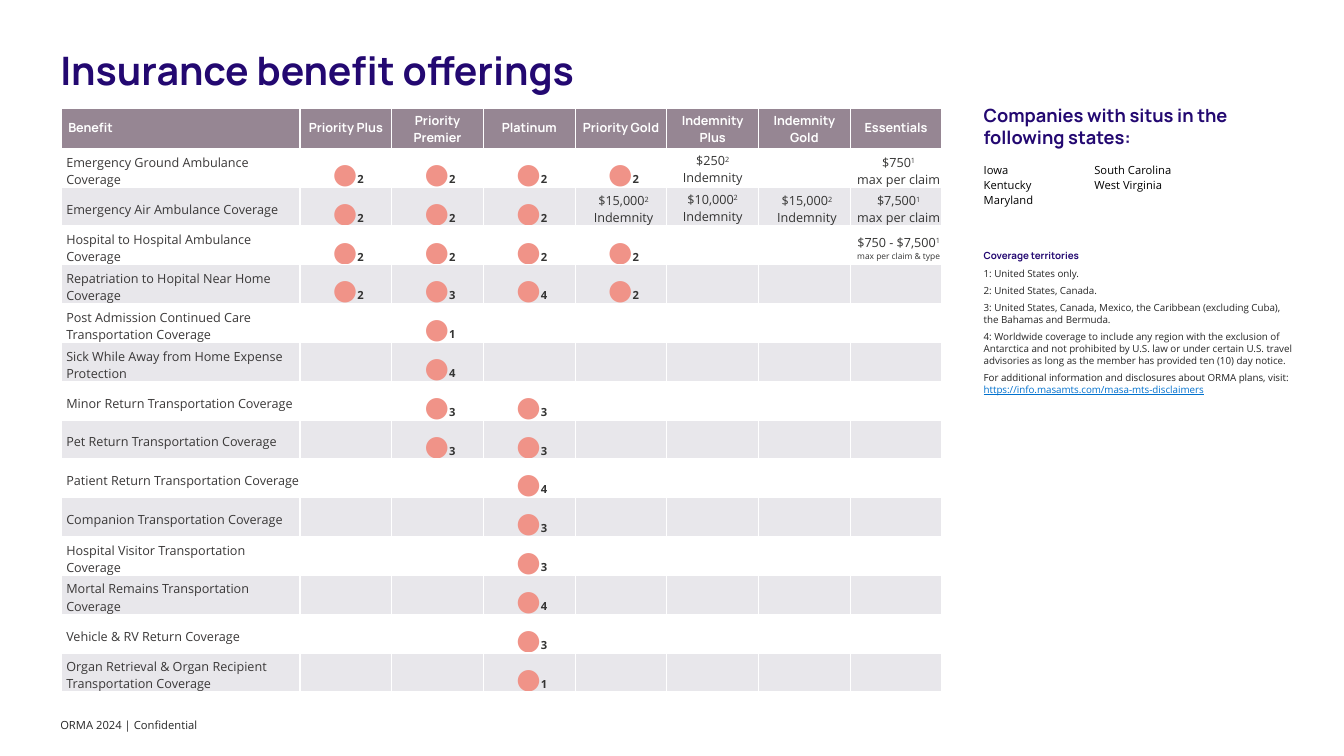
from dataclasses import dataclass

from pptx import Presentation
from pptx import util as u
from pptx.dml.color import RGBColor
from pptx.enum import text


@dataclass(frozen=True)
class Theme:
    """Fonts, colours and type sizes of the slide."""
    heading: str = "Manrope"
    body: str = "Open Sans"
    navy: str = "230871"
    black: str = "000000"
    ink: str = "262626"
    soft_ink: str = "222222"
    benefit: str = "3A3838"
    figure: str = "343433"
    dot: str = "F09388"
    link: str = "0071CE"
    white: str = "FFFFFF"
    header: str = "968693"
    band: str = "E8E7EB"
    title_size: float = 28
    dot_size: float = 20
    subtitle_size: float = 13
    table_size: float = 9
    small_size: float = 8
    note_size: float = 7
    tiny_size: float = 6


class BenefitSlide:
    """Draws titles, text blocks and the benefit table on one slide."""

    def __init__(self, deck, theme):
        self.theme = theme
        self.slide = deck.slides.add_slide(deck.slide_layouts[6])

    def style(self, font, face, size, colour, bold=False):
        """Set face, size, colour and weight of a font."""
        font.name, font.size, font.bold = face, u.Pt(size), bold
        font.color.rgb = RGBColor.from_string(colour)

    def run(self, paragraph, words, size, colour, bold=False):
        """Append a body-face run and return it."""
        piece = paragraph.add_run()
        piece.text = words
        self.style(piece.font, self.theme.body, size, colour, bold)
        return piece

    def block(self, place, lines, face, size, colour, bold=False,
              spacing=1.0, inset=(0, 0)):
        """Add a text box with one paragraph per line and return its frame."""
        frame = self.slide.shapes.add_textbox(*map(u.Cm, place)).text_frame
        frame.word_wrap = True
        frame.margin_left = frame.margin_right = u.Cm(inset[0])
        frame.margin_top = frame.margin_bottom = u.Cm(inset[1])
        for index, line in enumerate(lines):
            paragraph = frame.add_paragraph() if index else frame.paragraphs[0]
            paragraph.text = line
            paragraph.line_spacing = spacing
            self.style(paragraph.font, face, size, colour, bold)
        return frame

    def territories(self, place, heading, notes, lead, address):
        """Add the territory notes, closing with an underlined address."""
        t = self.theme
        frame = self.block(place, [heading, *notes], t.body, t.note_size, t.ink)
        self.style(frame.paragraphs[0].font, t.heading, t.note_size, t.navy, True)
        closing = frame.add_paragraph()
        self.run(closing, lead, t.note_size, t.soft_ink)
        self.run(closing, address, t.note_size, t.link).font.underline = True
        for paragraph in frame.paragraphs[1:]:
            paragraph.space_before = u.Pt(4)

    def cell(self, cell, fill, margins):
        """Prepare a table cell and return its first paragraph."""
        cell.fill.solid()
        cell.fill.fore_color.rgb = RGBColor.from_string(fill)
        cell.vertical_anchor = text.MSO_ANCHOR.MIDDLE
        (cell.margin_left, cell.margin_top,
         cell.margin_right, cell.margin_bottom) = map(u.Cm, margins)
        return cell.text_frame.paragraphs[0]

    def cover(self, cell, paragraph, cover):
        """Fill a cell with a dot and territory, or an amount and its note."""
        t = self.theme
        paragraph.alignment = text.PP_ALIGN.CENTER
        if isinstance(cover, int):
            self.run(paragraph, "●", t.dot_size, t.dot)
            self.run(paragraph, str(cover), t.small_size, t.figure, True)
        elif cover:
            amount, territory, note, note_size = cover
            self.run(paragraph, amount, t.table_size, t.figure)
            mark = self.run(paragraph, territory, t.table_size, t.figure)
            mark.font._element.set("baseline", "30000")
            below = cell.text_frame.add_paragraph()
            below.alignment = text.PP_ALIGN.CENTER
            self.run(below, note, note_size, t.figure)
        else:
            self.style(paragraph.font, t.body, t.table_size, t.figure)

    def benefits(self, place, plans, rows, benefit_width, header_height):
        """Add the table of benefits against plans."""
        t = self.theme
        width, height = place[2:]
        table = self.slide.shapes.add_table(
            len(rows) + 1, len(plans), *map(u.Cm, place)).table
        for index, column in enumerate(table.columns):
            column.width = u.Cm((width - benefit_width) / (len(plans) - 1)
                                if index else benefit_width)
        for index, row in enumerate(table.rows):
            row.height = u.Cm((height - header_height) / len(rows)
                              if index else header_height)
        for column, plan in enumerate(plans):
            paragraph = self.cell(table.cell(0, column), t.header,
                                  (0.18, 0.1, 0.18, 0.1))
            paragraph.text = plan
            if column:
                paragraph.alignment = text.PP_ALIGN.CENTER
            self.style(paragraph.font, t.heading, t.table_size, t.white, True)
        for number, (benefit, *covers) in enumerate(rows, 1):
            fill = t.white if number % 2 else t.band
            covers += [None] * (len(plans) - 1 - len(covers))
            for column, cover in enumerate([benefit, *covers]):
                cell = table.cell(number, column)
                margins = ((0.18, 0.1, 0.18, 0.1)
                           if plans[column] == "Indemnity Plus" and cover
                           else (0.13, 0.13, 0, 0))
                paragraph = self.cell(cell, fill, margins)
                if column:
                    self.cover(cell, paragraph, cover)
                else:
                    paragraph.text = benefit
                    self.style(paragraph.font, t.body, t.table_size, t.benefit)


def indemnity(amount):
    """Return an indemnity amount for territory 2."""
    return amount, "2", "Indemnity", Theme.table_size


def maximum(amount, note="max per claim", size=Theme.table_size):
    """Return a claim limit for territory 1."""
    return amount, "1", note, size


PLANS = ["Benefit", "Priority Plus", "Priority Premier", "Platinum",
         "Priority Gold", "Indemnity Plus", "Indemnity Gold", "Essentials"]
ROWS = [
    ("Emergency Ground Ambulance Coverage", 2, 2, 2, 2,
     indemnity("$250"), None, maximum("$750")),
    ("Emergency Air Ambulance Coverage", 2, 2, 2, indemnity("$15,000"),
     indemnity("$10,000"), indemnity("$15,000"), maximum("$7,500")),
    ("Hospital to Hospital Ambulance Coverage", 2, 2, 2, 2, None, None,
     maximum("$750 - $7,500", "max per claim & type", Theme.tiny_size)),
    ("Repatriation to Hopital Near Home Coverage", 2, 3, 4, 2),
    ("Post Admission Continued Care Transportation Coverage", None, 1),
    ("Sick While Away from Home Expense Protection", None, 4),
    ("Minor Return Transportation Coverage", None, 3, 3),
    ("Pet Return Transportation Coverage", None, 3, 3),
    ("Patient Return Transportation Coverage", None, None, 4),
    ("Companion Transportation Coverage", None, None, 3),
    ("Hospital Visitor Transportation Coverage", None, None, 3),
    ("Mortal Remains Transportation Coverage", None, None, 4),
    ("Vehicle & RV Return Coverage", None, None, 3),
    ("Organ Retrieval & Organ Recipient Transportation Coverage", None, None, 1),
]
TERRITORIES = [
    "1: United States only.",
    "2: United States, Canada.",
    "3: United States, Canada, Mexico, the Caribbean (excluding Cuba), "
    "the Bahamas and Bermuda.",
    "4: Worldwide coverage to include any region with the exclusion of "
    "Antarctica and not prohibited by U.S. law or under certain U.S. travel "
    "advisories as long as the member has provided ten (10) day notice.",
]


def main():
    """Build the slide and save it."""
    deck = Presentation()
    deck.slide_width, deck.slide_height = u.Cm(33.87), u.Cm(19.05)
    t = Theme()
    page = BenefitSlide(deck, t)
    page.block((1.27, 17.98, 20.14, 0.61), ["ORMA 2024 | Confidential"],
               t.body, t.small_size, t.ink, inset=(0.25, 0.13))
    page.block((1.52, 1.3, 29.21, 2.03), ["Insurance benefit offerings"],
               t.heading, t.title_size, t.navy, True, 0.9)
    page.territories((24.79, 6.3, 7.85, 4.22), "Coverage territories", TERRITORIES,
                     "For additional information and disclosures about ORMA plans, visit: ",
                     "https://info.masamts.com/masa-mts-disclaimers")
    page.block((24.79, 2.62, 6.27, 1.45),
               ["Companies with situs in the following states:"],
               t.heading, t.subtitle_size, t.navy, True)
    page.block((24.79, 4.06, 3.2, 1.75), ["Iowa", "Kentucky", "Maryland"],
               t.body, t.small_size, t.black, spacing=1.14)
    page.block((27.58, 4.06, 2.77, 1.37), ["South Carolina", "West Virginia"],
               t.body, t.small_size, t.black, spacing=1.14)
    page.benefits((1.54, 2.72, 22.2, 14.66), PLANS, ROWS, 6.02, 1.02)
    deck.save("out.pptx")


if __name__ == "__main__":
    main()
